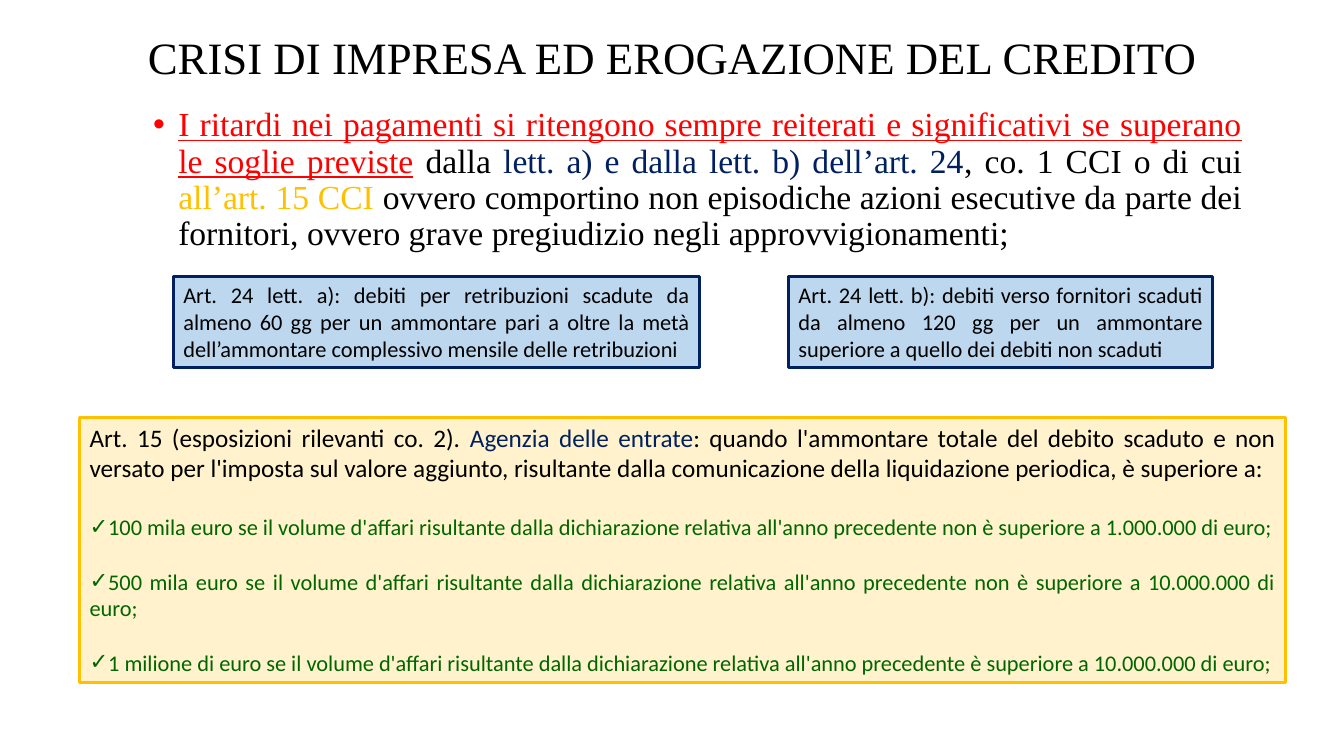
import pptx
import pptx.dml.color
import pptx.enum.shapes
import pptx.enum.text
import pptx.oxml.xmlchemy
import pptx.util
from lxml import etree
from pptx.oxml.ns import qn

Inches = pptx.util.Inches
Pt = pptx.util.Pt
ALIGN = pptx.enum.text.PP_ALIGN
ANCHOR = pptx.enum.text.MSO_ANCHOR

COLORS = {
    "black": "000000",
    "red": "FF0000",
    "navy": "002060",
    "gold": "FFC000",
    "green": "006600",
    "sky": "BDD7EE",
    "cream": "FFF2CC",
}
SERIF = "Times New Roman"
SANS = "Calibri"


def rgb(name):
    return pptx.dml.color.RGBColor.from_string(COLORS[name])


class SlideBuilder:
    def __init__(self, prs):
        self.slide = prs.slides.add_slide(prs.slide_layouts[6])

    def text(self, box, anchor=ANCHOR.TOP):
        sp = self.slide.shapes.add_textbox(*map(Inches, box))
        return self.frame(sp, anchor)

    def panel(self, box, fill, line):
        rect = pptx.enum.shapes.MSO_SHAPE.RECTANGLE
        sp = self.slide.shapes.add_shape(rect, *map(Inches, box))
        sp.shadow.inherit = False
        sp.fill.solid()
        sp.fill.fore_color.rgb = rgb(fill)
        sp.line.color.rgb = rgb(line)
        sp.line.width = Pt(2.25)
        return self.frame(sp, ANCHOR.TOP)

    def frame(self, sp, anchor):
        tf = sp.text_frame
        tf.word_wrap = True
        tf.vertical_anchor = anchor
        return tf

    def paragraph(self, tf, parts, size, font, align=ALIGN.JUSTIFY,
                  before=0, spacing=None):
        p = tf.paragraphs[0] if not tf.paragraphs[0].runs else tf.add_paragraph()
        p.alignment = align
        p.space_before = Pt(before)
        if spacing:
            p.line_spacing = spacing
        for text, color, *underline in parts:
            r = p.add_run()
            r.text = text
            r.font.size = Pt(size)
            r.font.name = font
            r.font.color.rgb = rgb(color)
            r.font.underline = bool(underline)
        return p

    def bullet(self, p, char, margin=0, indent=0):
        pPr = p._p.get_or_add_pPr()
        pPr.set("marL", str(Inches(margin)))
        pPr.set("indent", str(Inches(indent)))
        etree.SubElement(pPr, qn("a:buFont")).set("typeface", "Arial")
        etree.SubElement(pPr, qn("a:buChar")).set("char", char)


def main():
    prs = pptx.Presentation()
    prs.slide_width = Inches(13.33)
    prs.slide_height = Inches(7.5)
    s = SlideBuilder(prs)

    title = s.text((0.92, 0.2, 11.5, 0.78), ANCHOR.MIDDLE)
    s.paragraph(title, [("CRISI DI IMPRESA ED EROGAZIONE DEL CREDITO", "black")],
                32, SERIF, ALIGN.CENTER, spacing=0.9)

    body = s.text((0.92, 1.02, 11.5, 6.34))
    p = s.paragraph(body, [
        ("I ritardi nei pagamenti si ritengono sempre reiterati e significativi "
         "se superano le soglie previste", "red", "underline"),
        (" dalla ", "black"),
        ("lett. a) e dalla lett. b) dell’art. 24", "navy"),
        (", co. 1 CCI o di cui ", "black"),
        ("all’art. 15 CCI ", "gold"),
        ("ovvero comportino non episodiche azioni esecutive da parte dei "
         "fornitori, ovvero grave pregiudizio negli approvvigionamenti;", "black"),
    ], 24, SERIF, before=5, spacing=0.9)
    s.bullet(p, "•", 0.75, -0.25)

    articles = [
        (1.72, 5.22, "Art. 24 lett. a): debiti per retribuzioni scadute da almeno "
         "60 gg per un ammontare pari a oltre la metà dell’ammontare complessivo "
         "mensile delle retribuzioni"),
        (7.82, 4.21, "Art. 24 lett. b): debiti verso fornitori scaduti da almeno "
         "120 gg per un ammontare superiore a quello dei debiti non scaduti"),
    ]
    for left, width, text in articles:
        tf = s.panel((left, 2.74, width, 0.91), "sky", "navy")
        s.paragraph(tf, [(text, "black")], 16, SANS)

    exposures = s.panel((0.79, 4.14, 11.96, 2.63), "cream", "gold")
    s.paragraph(exposures, [
        ("Art. 15 (esposizioni rilevanti co. 2). ", "black"),
        ("Agenzia delle entrate", "navy"),
        (": quando l'ammontare totale del debito scaduto e non versato per "
         "l'imposta sul valore aggiunto, risultante dalla comunicazione della "
         "liquidazione periodica, è superiore a:", "black"),
    ], 18, SANS)
    thresholds = [
        ("100 mila", "non è superiore a 1.000.000", 22),
        ("500 mila", "non è superiore a 10.000.000", 19.5),
        ("1 milione di", "è superiore a 10.000.000", 19.5),
    ]
    for amount, limit, before in thresholds:
        text = (f"{amount} euro se il volume d'affari risultante dalla dichiarazione "
                f"relativa all'anno precedente {limit} di euro;")
        p = s.paragraph(exposures, [(text, "green")], 16, SANS, before=before)
        s.bullet(p, "✓")

    prs.save("out.pptx")


if __name__ == "__main__":
    main()
